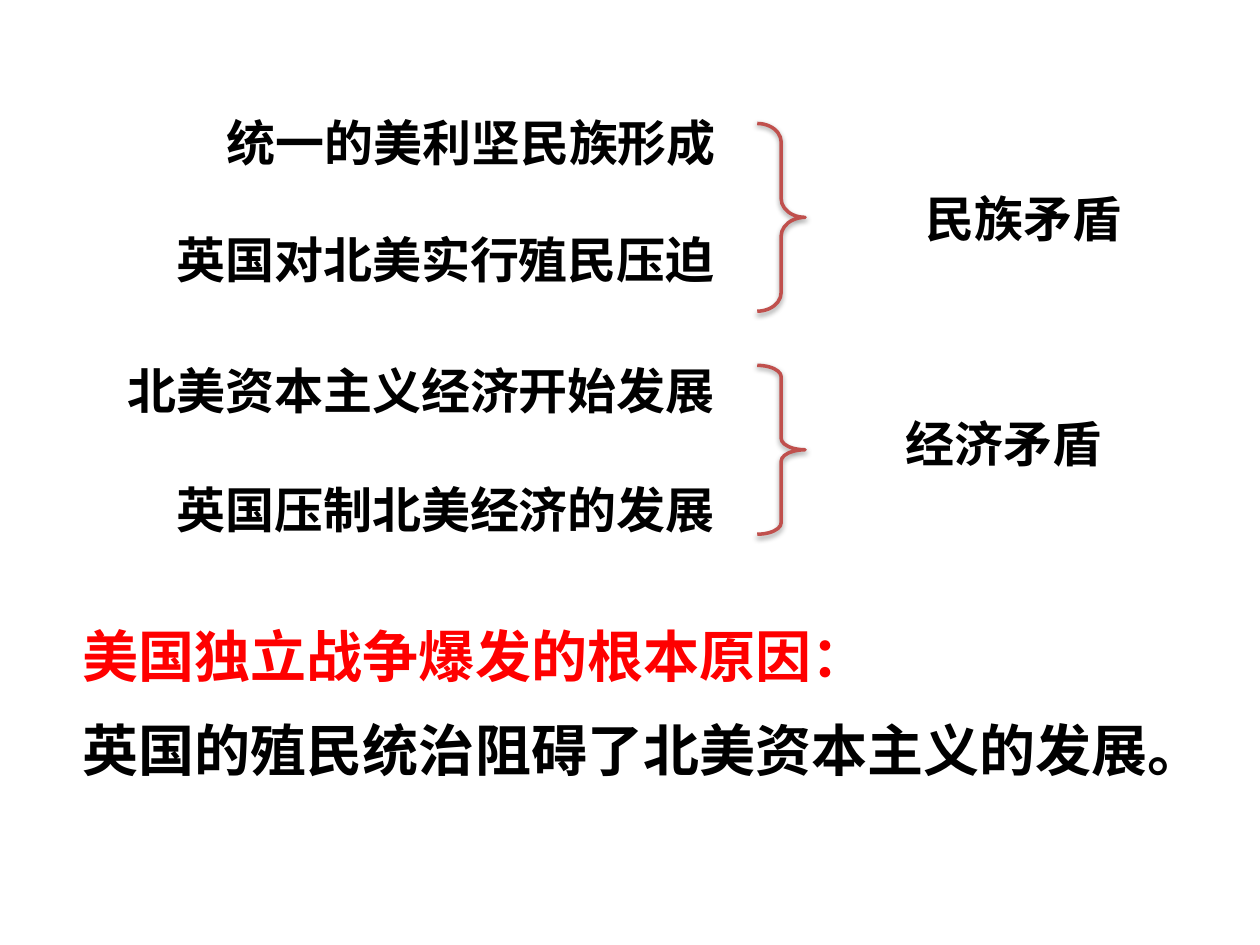
import pptx
import pptx.dml.color
import pptx.enum.shapes
import pptx.enum.text
import pptx.oxml
import pptx.oxml.ns
import pptx.util

Inches = pptx.util.Inches
Color = pptx.dml.color.RGBColor
Align = pptx.enum.text.PP_ALIGN

BLACK = Color(0x00, 0x00, 0x00)
RED = Color(0xFF, 0x00, 0x00)
BRICK = Color(0xC0, 0x50, 0x4D)

SHADE = (
    f'<a:effectLst {pptx.oxml.ns.nsdecls("a")}>'
    '<a:outerShdw blurRad="40000" dist="20000" dir="5400000" rotWithShape="0">'
    '<a:srgbClr val="000000"><a:alpha val="38000"/></a:srgbClr>'
    '</a:outerShdw></a:effectLst>'
)

# Each group: causes with their boxes, brace box and bend, conflict and its box
GROUPS = [
    ([("统一的美利坚民族形成", (1.02, 0.84, 4.76, 0.57)),
      ("英国对北美实行殖民压迫", (0.69, 1.77, 5.08, 0.57))],
     (6.01, 0.98, 0.38, 1.49), 0.39,
     "民族矛盾", (6.85, 1.45, 2.54, 0.57)),
    ([("北美资本主义经济开始发展", (0.35, 2.81, 5.42, 0.57)),
      ("英国压制北美经济的发展", (0.75, 3.76, 5.02, 0.57))],
     (6.01, 2.9, 0.38, 1.34), 0.24,
     "经济矛盾", (6.63, 3.23, 2.67, 0.57)),
]


def add_text(slide, text, box, align=Align.LEFT, size=28,
             face="Times New Roman", color=BLACK):
    frame = slide.shapes.add_textbox(*map(Inches, box)).text_frame
    frame.word_wrap = True
    para = frame.paragraphs[0]
    para.text = text
    para.alignment = align
    font = para.font
    font.name, font.size, font.bold = face, pptx.util.Pt(size), True
    font.color.rgb = color


def add_brace(slide, box, bend):
    kind = pptx.enum.shapes.MSO_SHAPE.RIGHT_BRACE
    brace = slide.shapes.add_shape(kind, *map(Inches, box))
    brace.adjustments[0] = bend
    brace.fill.background()
    brace.line.color.rgb = BRICK
    brace.line.width = pptx.util.Pt(2)
    # Soft shadow below the line
    brace.element.spPr.append(pptx.oxml.parse_xml(SHADE))


def add_group(slide, causes, span, bend, label, box):
    for text, place in causes:
        add_text(slide, text, place, Align.RIGHT)
    add_brace(slide, span, bend)
    add_text(slide, label, box, Align.CENTER)


def add_answer(slide, left, top):
    add_text(slide, "美国独立战争爆发的根本原因：", (left, top, 7.07, 0.64),
             size=32, face="Arial", color=RED)
    add_text(slide, "英国的殖民统治阻碍了北美资本主义的发展。",
             (left, top + 0.75, 8.84, 0.78), size=32, face="Arial")


def main():
    deck = pptx.Presentation()
    deck.slide_width, deck.slide_height = Inches(10), Inches(7.5)
    slide = deck.slides.add_slide(deck.slide_layouts[6])

    # Causes and the conflicts they lead to
    for group in GROUPS:
        add_group(slide, *group)

    # Root cause
    add_answer(slide, 0.56, 4.88)
    deck.save("out.pptx")


if __name__ == "__main__":
    main()
